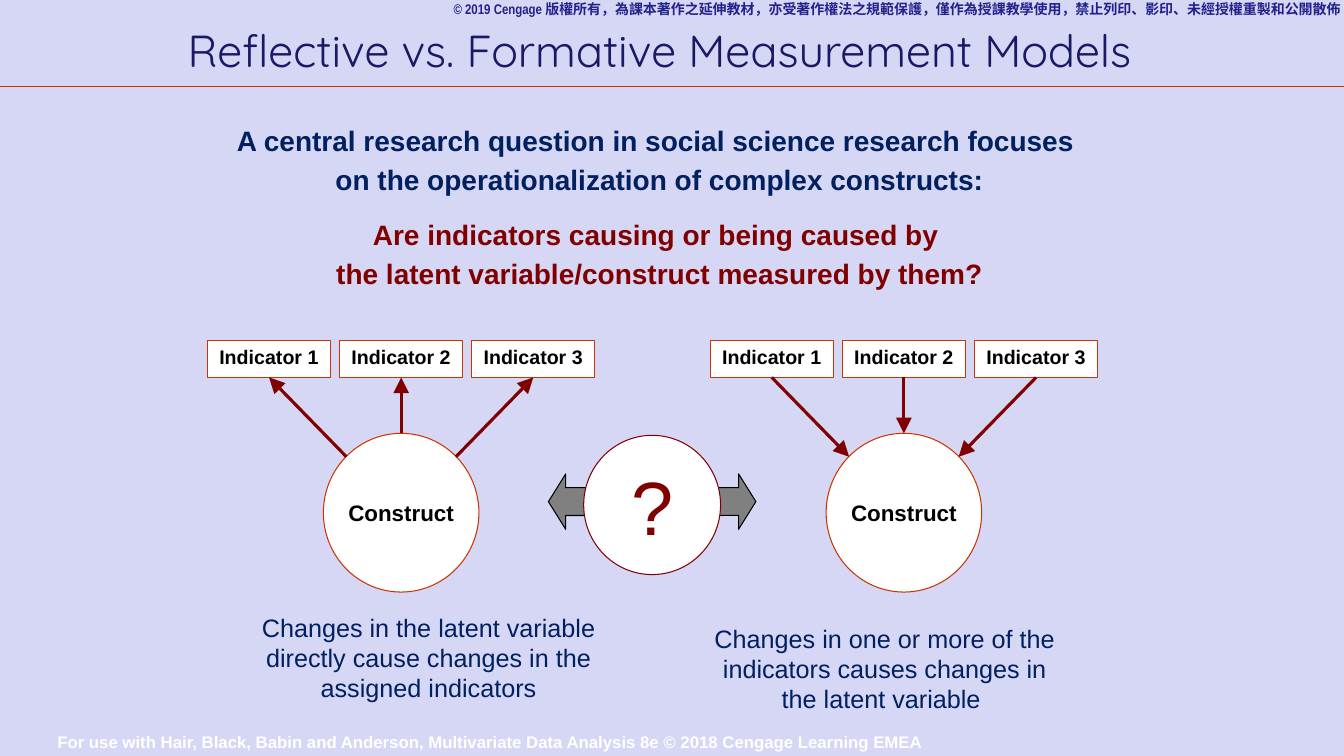
import pptx
import pptx.util
import pptx.dml.color
import pptx.enum.shapes
import pptx.enum.text
import pptx.oxml
import pptx.oxml.ns

Cm = pptx.util.Cm
Pt = pptx.util.Pt
SHAPES = pptx.enum.shapes.MSO_SHAPE
ALIGN = pptx.enum.text.PP_ALIGN
ANCHOR = pptx.enum.text.MSO_ANCHOR

ORANGE, MAROON, NAVY = "CC3300", "800000", "002060"
WHITE, BLACK = "FFFFFF", "000000"


def colour(value):
    return pptx.dml.color.RGBColor.from_string(value)


def apply_format(target, values):
    for name, value in values.items():
        setattr(target, name, value)


def write_text(box, lines, size, ink, name="Arial", bold=False,
               align=ALIGN.CENTER, frame=None):
    """Each line is a text, or a tuple of text, space before and colour."""
    text_frame = box.text_frame
    apply_format(text_frame, {"word_wrap": True, **(frame or {})})
    for number, line in enumerate(lines):
        text, before, tint = line if isinstance(line, tuple) else (line, 0, ink)
        para = text_frame.paragraphs[0] if number == 0 else text_frame.add_paragraph()
        apply_format(para, {"alignment": align, "space_before": Pt(before)})
        span = para.add_run()
        span.text = text
        apply_format(span.font, {"name": name, "size": Pt(size), "bold": bold})
        span.font.color.rgb = colour(tint)


def add_text(page, place, lines, size, ink, **options):
    box = page.shapes.add_textbox(*map(Cm, place))
    write_text(box, lines, size, ink, **options)


def add_figure(page, kind, place, fill, edge):
    figure = page.shapes.add_shape(kind, *map(Cm, place))
    figure.shadow.inherit = False
    figure.fill.solid()
    figure.fill.fore_color.rgb = colour(fill)
    figure.line.color.rgb = colour(edge)
    figure.line.width = Pt(0.75)
    return figure


def add_line(page, start, end, ink, width, arrow=None):
    """The arrow is headEnd (at start), tailEnd (at end) or None."""
    line = page.shapes.add_connector(
        pptx.enum.shapes.MSO_CONNECTOR.STRAIGHT, *map(Cm, (*start, *end)))
    line.line.color.rgb = colour(ink)
    line.line.width = Pt(width)
    if arrow:
        stroke = line.line._get_or_add_ln()
        stroke.append(pptx.oxml.parse_xml(
            f'<a:{arrow} {pptx.oxml.ns.nsdecls("a")} type="triangle" w="lg" len="lg"/>'))
    line._element.spPr.append(pptx.oxml.parse_xml(
        f'<a:effectLst {pptx.oxml.ns.nsdecls("a")}/>'))
    return line


def add_model(page, left, arrow):
    """Three indicators above the construct they are linked with."""
    top, width, height, pitch = 8.58, 3.1, 0.93, 3.33
    middle = left + pitch + width / 2
    circle_top, circle_width, circle_height = 10.92, 3.92, 4.0
    construct = add_figure(
        page, SHAPES.OVAL,
        (middle - circle_width / 2, circle_top, circle_width, circle_height),
        WHITE, ORANGE)
    write_text(construct, ["Construct"], 16, BLACK, bold=True,
               frame={"margin_left": 0, "margin_right": 0})
    # Links leave the circle at its top and at 45 degrees on either side
    starts = [(-1.38, 0.59), (0, 0), (1.38, 0.59)]
    for number, (across, down) in enumerate(starts):
        indicator = add_figure(page, SHAPES.RECTANGLE,
                               (left + number * pitch, top, width, height),
                               WHITE, ORANGE)
        write_text(indicator, [f"Indicator {number + 1}"], 14, BLACK, bold=True,
                   frame={"margin_left": Cm(0.05), "margin_right": Cm(0.05),
                          "margin_top": Cm(0.03), "margin_bottom": Cm(0.13)})
        link = add_line(page, (middle + across, circle_top + down),
                        (left + number * pitch + width / 2, top + height),
                        MAROON, 2.25, arrow)
        if across == 0:
            link.begin_connect(construct, 0)
        link.end_connect(indicator, 2)


def add_question(page):
    """Question mark with an arrow towards each model."""
    for left, turn in ((17.32, 0), (13.82, 180)):
        pointer = add_figure(page, SHAPES.RIGHT_ARROW, (left, 11.94, 1.73, 1.4),
                             "808080", BLACK)
        pointer.adjustments[0] = 0.5
        pointer.adjustments[1] = 0.312
        pointer.rotation = turn
    circle = add_figure(page, SHAPES.OVAL, (14.71, 10.97, 3.45, 3.51), WHITE, MAROON)
    write_text(circle, ["?"], 54, MAROON, frame={"word_wrap": False})


def main():
    deck = pptx.Presentation()
    apply_format(deck, {"slide_width": Cm(33.87), "slide_height": Cm(19.05)})
    page = deck.slides.add_slide(deck.slide_layouts[6])
    page.background.fill.solid()
    page.background.fill.fore_color.rgb = colour("D6D6F5")

    # Header
    add_line(page, (0, 2.18), (33.87, 2.18), ORANGE, 0.75)
    add_text(page, (11.18, -0.1, 25.43, 0.69),
             ["© 2019 Cengage版權所有，為課本著作之延伸教材，亦受著作權法之規範保護，"
              "僅作為授課教學使用，禁止列印、影印、未經授權重製和公開散佈"],
             10, "22228B", name="Arial Narrow", bold=True, align=ALIGN.LEFT)
    add_text(page, (0.74, 0.36, 31.78, 1.78),
             ["Reflective vs. Formative Measurement Models"],
             32, "191966", name="Quicksand",
             frame={"vertical_anchor": ANCHOR.MIDDLE})

    # Research question
    add_text(page, (0.84, 3.0, 31.57, 5.4),
             ["A central research question in social science research focuses ",
              ("on the operationalization of complex constructs:", 3.5, NAVY),
              ("Are indicators causing or being caused by ", 15.5, MAROON),
              ("the latent variable/construct measured by them?", 3.5, MAROON)],
             20, NAVY, bold=True)

    # Reflective and formative models
    add_model(page, 5.23, "tailEnd")
    add_model(page, 17.9, "headEnd")
    add_question(page)
    add_text(page, (5.72, 15.3, 10.16, 2.57),
             ["Changes in the latent variable directly cause changes "
              "in the assigned indicators"], 18, NAVY)
    add_text(page, (17.48, 15.57, 9.63, 2.57),
             ["Changes in one or more of the indicators causes changes "
              "in the latent variable "], 18, NAVY)

    # Footer
    add_text(page, (0, 18.33, 24.72, 0.74),
             ["For use with Hair, Black, Babin and Anderson, "
              "Multivariate Data Analysis 8e © 2018 Cengage Learning EMEA"],
             12, WHITE, bold=True, frame={"vertical_anchor": ANCHOR.MIDDLE})

    deck.save("out.pptx")


if __name__ == "__main__":
    main()
